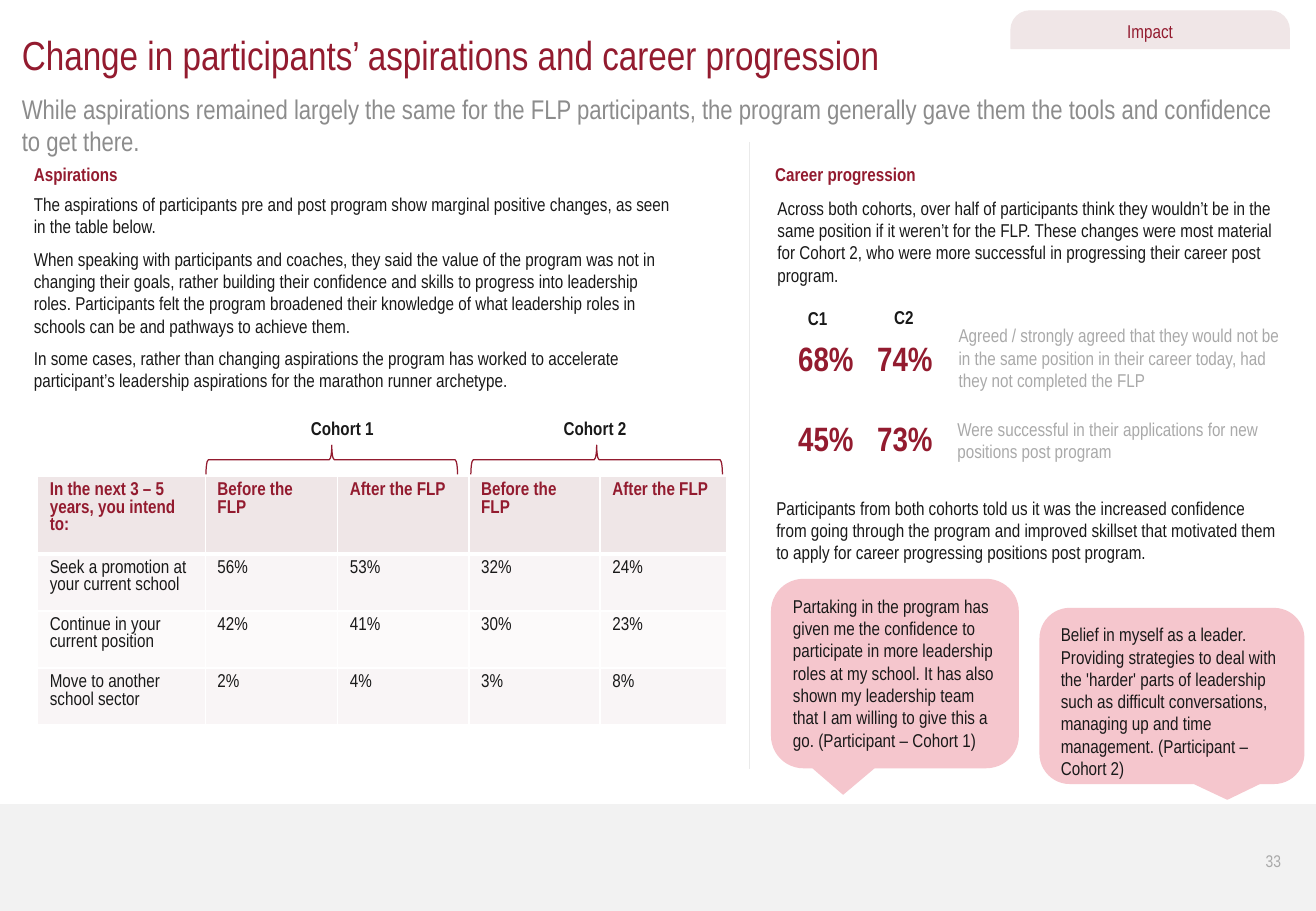
"""Build the slide on participants' aspirations and career progression."""
from dataclasses import dataclass
from typing import NamedTuple

from lxml import etree
from pptx import Presentation
from pptx.dml.color import RGBColor
from pptx.enum.shapes import MSO_CONNECTOR, MSO_SHAPE
from pptx.enum.text import MSO_ANCHOR, PP_ALIGN
from pptx.oxml.ns import qn
from pptx.util import Inches, Length, Pt

LEFT, CENTER, RIGHT = PP_ALIGN.LEFT, PP_ALIGN.CENTER, PP_ALIGN.RIGHT
TOP, MIDDLE, BOTTOM = MSO_ANCHOR.TOP, MSO_ANCHOR.MIDDLE, MSO_ANCHOR.BOTTOM
RECTANGLE, TAB = MSO_SHAPE.RECTANGLE, MSO_SHAPE.ROUND_2_SAME_RECTANGLE
BRACE, CALLOUT = MSO_SHAPE.LEFT_BRACE, MSO_SHAPE.ROUNDED_RECTANGULAR_CALLOUT
STRAIGHT = MSO_CONNECTOR.STRAIGHT

FONT = "Arial Narrow"
WINE, INK, GREY, SILVER = "931B2F", "191919", "8C8C8C", "A9A9A9"
BLUSH, PINK, BAND, RULE, WHITE = "F0E6E7", "F5C6CD", "F2F2F2", "EAEAEA", "FFFFFF"
HEADER_FILL, ROW_FILLS = "EFE6E7", ("F9F5F6", "FCFAFA")
GRID_COLUMNS, GRID_ROWS = 108.3, 75


class Area(NamedTuple):
    """Left, top, width and height in grid columns and rows."""
    column: float
    row: float
    columns: float
    rows: float


@dataclass(frozen=True)
class Style:
    """Type settings of a piece of text."""
    size: float = 11
    color: str = INK
    bold: bool = False
    align: PP_ALIGN = LEFT
    after: float = 6


@dataclass(frozen=True)
class Passage:
    """Text placed on the grid."""
    area: Area
    paragraphs: tuple[str, ...]
    style: Style = Style()
    wrap: bool = True
    anchor: MSO_ANCHOR = TOP


@dataclass(frozen=True)
class Panel:
    """A preset shape placed on the grid."""
    kind: MSO_SHAPE
    area: Area
    fill: str | None
    line: str | None
    adjustments: tuple[float, ...] = ()
    rotation: float = 0
    text: str = ""
    style: Style = Style()
    anchor: MSO_ANCHOR = TOP


HEADING, LABEL = Style(color=WINE, bold=True), Style(bold=True)
NOTE, RATE = Style(color=SILVER), Style(20, WINE, True)
CELL, HEADER = Style(after=0), Style(color=WINE, bold=True, after=0)

TITLE = Passage(Area(1.8, 2.5, 104.7, 4),
                ("Change in participants’ aspirations and career progression",),
                Style(24, WINE, after=0))
SUBTITLE = Passage(Area(1.8, 7.6, 104.7, 5.4), (
    "While aspirations remained largely the same for the FLP participants, the program "
    "generally gave them the tools and confidence to get there.",), Style(16, GREY))

PASSAGES = [
    Passage(Area(1.8, 12.9, 9.3, 2.9), ("Aspirations",), HEADING, False),
    Passage(Area(1.8, 15.4, 55.1, 17.5), (
        "The aspirations of participants pre and post program show marginal positive "
        "changes, as seen in the table below.",
        "When speaking with participants and coaches, they said the value of the program was "
        "not in changing their goals, rather building their confidence and skills to progress "
        "into leadership roles. Participants felt the program broadened their knowledge of "
        "what leadership roles in schools can be and pathways to achieve them.",
        "In some cases, rather than changing aspirations the program has worked to accelerate "
        "participant’s leadership aspirations for the marathon runner archetype.")),
    Passage(Area(24.6, 33.8, 7.2, 2.9), ("Cohort 1",), LABEL, False),
    Passage(Area(45.4, 33.8, 7.6, 2.9), ("Cohort 2",), LABEL, False),
    Passage(Area(62.8, 12.9, 14, 2.9), ("Career progression",), HEADING, False),
    Passage(Area(63, 15.7, 43.3, 8.4), (
        "Across both cohorts, over half of participants think they wouldn’t be in the same "
        "position if it weren’t for the FLP. These changes were most material for Cohort 2, "
        "who were more successful in progressing their career post program.",)),
    Passage(Area(65.5, 24.8, 3.6, 2.9), ("C1",), LABEL, False),
    Passage(Area(72.6, 24.7, 4, 2.9), ("C2",), LABEL, False),
    Passage(Area(77.9, 26.2, 28.8, 6.6), (
        "Agreed / strongly agreed that they would not be in the same position in their "
        "career today, had they not completed the FLP",), NOTE),
    Passage(Area(77.8, 33.9, 27.4, 4.7), (
        "Were successful in their applications for new positions post program",), NOTE),
    Passage(Area(62.9, 40.4, 43.3, 6.6), (
        "Participants from both cohorts told us it was the increased confidence from going "
        "through the program and improved skillset that motivated them to apply for career "
        "progressing positions post program.",)),
    Passage(Area(102.7, 68.9, 3.7, 4), ("33",), Style(10, SILVER, align=RIGHT, after=0),
            anchor=MIDDLE),
] + [
    Passage(Area(64.7 + 6.5 * cohort, 27.3 + 6.6 * finding, 6.6, 4.4), (rate,), RATE, False)
    for finding, rates in enumerate((("68%", "74%"), ("45%", "73%")))
    for cohort, rate in enumerate(rates)
]

PANELS = [
    Panel(RECTANGLE, Area(0, 66.2, GRID_COLUMNS, 8.8), BAND, None),
    Panel(TAB, Area(83.2, 0.9, 22.9, 3.1), BLUSH, BLUSH, (0.5, 0), text="Impact",
          style=Style(color=WINE, align=CENTER), anchor=BOTTOM),
    Panel(CALLOUT, Area(63.5, 47.7, 20.3, 15.5), PINK, PINK, (-0.21, 0.64, 0.17), text=(
        "Partaking in the program has given me the confidence to participate in more "
        "leadership roles at my school. It has also shown my leadership team that I am "
        "willing to give this a go. (Participant – Cohort 1)")),
    Panel(CALLOUT, Area(85.6, 50.1, 21.7, 14.4), PINK, PINK, (0.21, 0.59, 0.17), text=(
        "Belief in myself as a leader. Providing strategies to deal with the 'harder' parts "
        "of leadership such as difficult conversations, managing up and time management. "
        "(Participant – Cohort 2)")),
] + [Panel(BRACE, Area(column, 27.5, 2.4, 20.7), None, WINE, rotation=90)
     for column in (26.1, 47.9)]

INTENTIONS = [
    ("In the next 3 – 5 years, you intend to:",) + ("Before the FLP", "After the FLP") * 2,
    ("Seek a promotion at your current school", "56%", "53%", "32%", "24%"),
    ("Continue in your current position", "42%", "41%", "30%", "23%"),
    ("Move to another school sector", "2%", "4%", "3%", "8%"),
]
TABLE_AREA = Area(3.1, 39.2, 56.7, 20.5)
TABLE_COLUMNS, TABLE_ROWS = (13.8, 10.9, 10.8, 10.8, 10.4), (6.4, 4.7, 4.7, 4.7)


def units(count: float) -> Length:
    """Turn grid columns or rows into a length."""
    return Inches(count / 10)


def place(area: Area) -> tuple[Length, ...]:
    """Turn a grid area into left, top, width and height."""
    return tuple(units(value) for value in area)


def paint(target, color: str | None) -> None:
    """Give a fill a solid colour, or none."""
    if color is None:
        target.background()
    else:
        target.solid()
        target.fore_color.rgb = RGBColor.from_string(color)


def write(frame, paragraphs: tuple[str, ...], style: Style, bullet_free: bool = False) -> None:
    """Fill a text frame with styled paragraphs."""
    for index, text in enumerate(paragraphs):
        paragraph = frame.add_paragraph() if index else frame.paragraphs[0]
        paragraph.text = text
        paragraph.alignment, paragraph.line_spacing = style.align, 1.0
        paragraph.space_before, paragraph.space_after = Pt(0), Pt(style.after)
        if bullet_free:
            properties = paragraph._p.get_or_add_pPr()
            properties.set("marL", "0")
            properties.set("indent", "0")
            etree.SubElement(properties, qn("a:buNone"))
        font = paragraph.font
        font.name, font.size, font.bold = FONT, Pt(style.size), style.bold
        paint(font.fill, style.color)


def fill_placeholder(holder, passage: Passage) -> None:
    """Move a placeholder and set its text."""
    holder.left, holder.top, holder.width, holder.height = place(passage.area)
    frame = holder.text_frame
    frame.margin_left = frame.margin_right = frame.margin_top = frame.margin_bottom = 0
    frame.vertical_anchor, frame.word_wrap = passage.anchor, True
    write(frame, passage.paragraphs, passage.style, bullet_free=True)


def draw_passage(slide, passage: Passage) -> None:
    """Add a text box."""
    frame = slide.shapes.add_textbox(*place(passage.area)).text_frame
    frame.word_wrap, frame.vertical_anchor = passage.wrap, passage.anchor
    write(frame, passage.paragraphs, passage.style)


def draw_panel(slide, panel: Panel) -> None:
    """Add a preset shape with its text."""
    shape = slide.shapes.add_shape(panel.kind, *place(panel.area))
    shape.shadow.inherit, shape.rotation = False, panel.rotation
    for index, value in enumerate(panel.adjustments):
        shape.adjustments[index] = value
    paint(shape.fill, panel.fill)
    paint(shape.line.fill, panel.line)
    if panel.line:
        shape.line.width = Pt(0.75)
    if panel.text:
        shape.text_frame.vertical_anchor = panel.anchor
        write(shape.text_frame, (panel.text,), panel.style)


def border(cell, header: bool) -> None:
    """Draw white borders round a cell, thicker below the header."""
    properties = cell._tc.get_or_add_tcPr()
    for position, side in enumerate(("lnL", "lnR", "lnT", "lnB")):
        width = Pt(3 if header and side == "lnB" else 1)
        edge = etree.Element(qn(f"a:{side}"), w=str(width))
        solid = etree.SubElement(edge, qn("a:solidFill"))
        etree.SubElement(solid, qn("a:srgbClr"), val=WHITE)
        properties.insert(position, edge)


def draw_intentions(slide) -> None:
    """Add the table of intentions before and after the program."""
    table = slide.shapes.add_table(len(TABLE_ROWS), len(TABLE_COLUMNS), *place(TABLE_AREA)).table
    table.horz_banding = False
    for column, width in zip(table.columns, TABLE_COLUMNS):
        column.width = units(width)
    for index, (row, height, texts) in enumerate(zip(table.rows, TABLE_ROWS, INTENTIONS)):
        row.height = units(height)
        for cell, text in zip(row.cells, texts):
            paint(cell.fill, ROW_FILLS[(index - 1) % 2] if index else HEADER_FILL)
            border(cell, index == 0)
            write(cell.text_frame, (text,), CELL if index else HEADER)


def draw_divider(slide) -> None:
    """Add the rule between the two halves."""
    divider = slide.shapes.add_connector(
        STRAIGHT, units(61.7), units(11.7), units(61.7), units(63.3))
    paint(divider.line.fill, RULE)
    divider.line.width = Pt(0.75)
    etree.SubElement(divider._element.spPr, qn("a:effectLst"))


def main() -> None:
    """Build and save the slide."""
    deck = Presentation()
    deck.slide_width, deck.slide_height = units(GRID_COLUMNS), units(GRID_ROWS)
    slide = deck.slides.add_slide(deck.slide_layouts[1])
    fill_placeholder(slide.shapes.title, TITLE)
    fill_placeholder(slide.placeholders[1], SUBTITLE)
    for panel in PANELS:
        draw_panel(slide, panel)
    draw_intentions(slide)
    draw_divider(slide)
    for passage in PASSAGES:
        draw_passage(slide, passage)
    deck.save("out.pptx")


if __name__ == "__main__":
    main()
